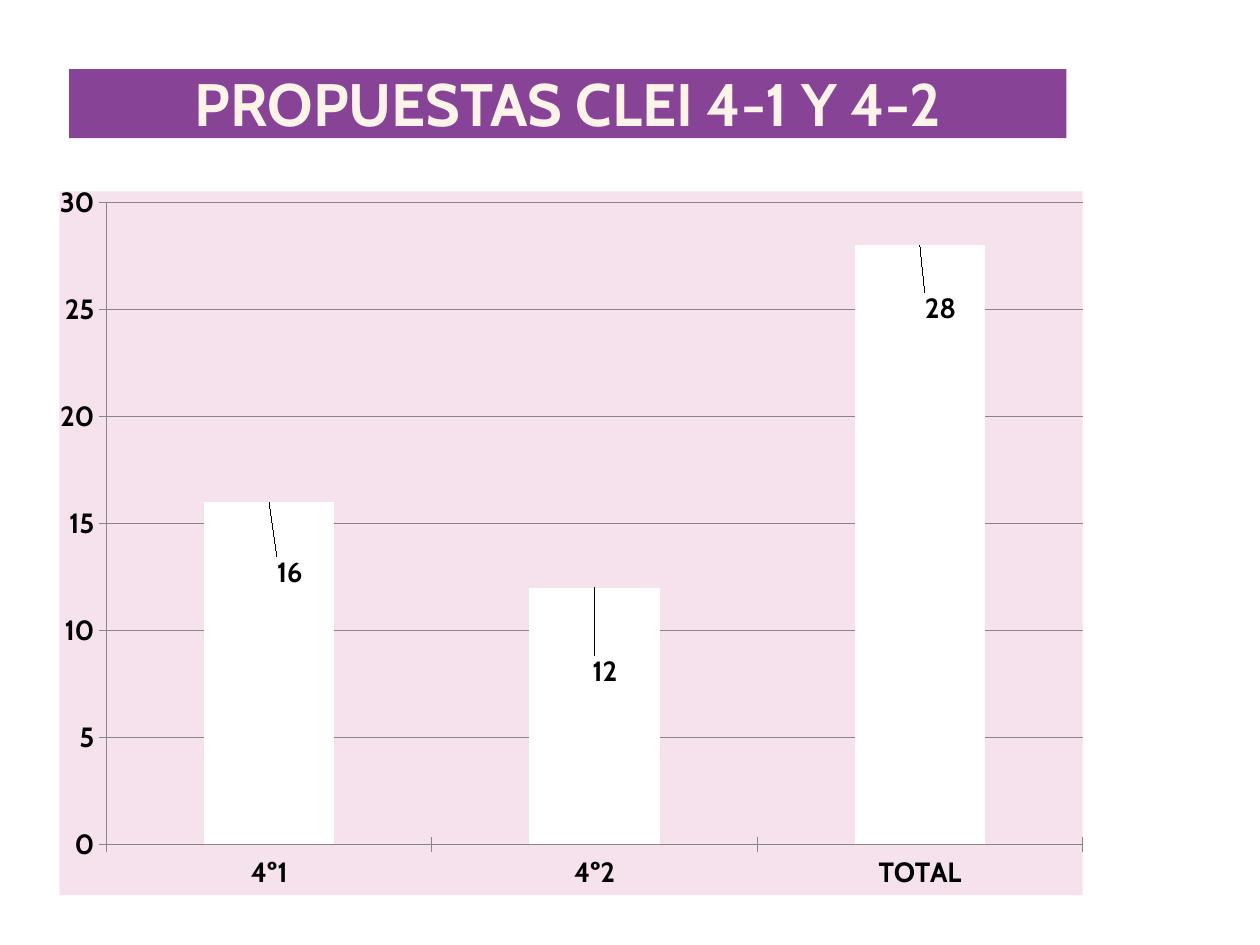
"""Build the slide of proposals for CLEI 4-1 and 4-2."""
from dataclasses import dataclass

from lxml.etree import _Element as Element
from pptx import Presentation
from pptx.chart.data import CategoryChartData
from pptx.dml.color import RGBColor
from pptx.enum.chart import XL_CHART_TYPE as ChartType
from pptx.enum.chart import XL_LABEL_POSITION as LabelPosition
from pptx.enum.chart import XL_TICK_MARK as TickMark
from pptx.enum.shapes import MSO_SHAPE as Preset
from pptx.enum.text import MSO_ANCHOR as Anchor
from pptx.enum.text import PP_ALIGN as Align
from pptx.oxml import parse_xml
from pptx.oxml.ns import nsdecls, qn
from pptx.util import Pt

PURPLE = RGBColor(0x87, 0x43, 0x96)
CREAM = RGBColor(0xFE, 0xF3, 0xE8)
PINK = RGBColor(0xF5, 0xE2, 0xED)
WHITE = RGBColor(0xFF, 0xFF, 0xFF)
BLACK = RGBColor(0, 0, 0)
GRAY = RGBColor(0x86, 0x86, 0x86)
FONT = "Cabin"


@dataclass(frozen=True)
class Bar:
    group: str
    proposals: int
    label_dx: float
    label_dy: float


@dataclass(frozen=True)
class Box:
    left: float
    top: float
    width: float
    height: float

    def lengths(self) -> tuple:
        return Pt(self.left), Pt(self.top), Pt(self.width), Pt(self.height)


BARS = (
    Bar("4º1", 16, 0.02, 0.13),
    Bar("4º2", 12, 0.01, 0.15),
    Bar("TOTAL", 28, 0.02, 0.12),
)


def style_font(font, *, size: float, color: RGBColor, bold: bool = True) -> None:
    font.name, font.size, font.bold = FONT, Pt(size), bold
    font.color.rgb = color


def write_text(frame, text: str, *, size: float, color: RGBColor, align: Align) -> None:
    paragraph = frame.paragraphs[0]
    paragraph.alignment = align
    run = paragraph.add_run()
    run.text = text
    style_font(run.font, size=size, color=color)


def add_banner(slide, box: Box, text: str) -> None:
    banner = slide.shapes.add_shape(Preset.RECTANGLE, *box.lengths())
    banner.shadow.inherit = False
    banner.fill.solid()
    banner.fill.fore_color.rgb = PURPLE
    banner.line.fill.background()
    frame = banner.text_frame
    frame.word_wrap = True
    frame.vertical_anchor = Anchor.BOTTOM
    frame.margin_left = frame.margin_right = Pt(3.6)
    frame.margin_top = frame.margin_bottom = 0
    write_text(frame, text, size=34.2, color=CREAM, align=Align.CENTER)


def manual_layout(target: str = "", **values: float) -> Element:
    modes = "".join(f'<c:{key}Mode val="edge"/>' for key in "xy") if target else ""
    inner = f'<c:layoutTarget val="{target}"/>' if target else ""
    sizes = "".join(f'<c:{key} val="{value}"/>' for key, value in values.items())
    return parse_xml(
        f"<c:layout {nsdecls('c')}><c:manualLayout>{inner}{modes}{sizes}"
        "</c:manualLayout></c:layout>"
    )


def style_axis(axis) -> None:
    axis.major_tick_mark = TickMark.CROSS
    axis.minor_tick_mark = TickMark.NONE
    axis.format.line.color.rgb = GRAY
    style_font(axis.tick_labels.font, size=16, color=BLACK)


def place_label(series, index: int, bar: Bar) -> None:
    label = series.points[index].data_label
    style_font(label.font, size=16, color=BLACK)
    label.position = LabelPosition.OUTSIDE_END
    entry = series.data_labels._element.findall(qn("c:dLbl"))[index]
    entry.insert(1, manual_layout(x=bar.label_dx, y=bar.label_dy))


def add_proposals_chart(slide, box: Box, bars: tuple[Bar, ...]) -> None:
    proposals = CategoryChartData()
    proposals.categories = [bar.group for bar in bars]
    proposals.add_series("Series 1", [bar.proposals for bar in bars])
    chart = slide.shapes.add_chart(
        ChartType.COLUMN_CLUSTERED, *box.lengths(), proposals
    ).chart
    chart.has_title = chart.has_legend = False
    style_font(chart.font, size=10, color=BLACK, bold=False)

    background = parse_xml(
        f"<c:spPr {nsdecls('c', 'a')}><a:solidFill><a:srgbClr val=\"{PINK}\"/>"
        "</a:solidFill><a:ln><a:noFill/></a:ln></c:spPr>"
    )
    chart_part = chart._chartSpace.find(qn("c:chart"))
    chart_part.addnext(background)
    plot_area = chart_part.find(qn("c:plotArea"))
    for automatic in plot_area.findall(qn("c:layout")):
        plot_area.remove(automatic)
    plot_area.insert(0, manual_layout("inner", x=0.046, y=0.016, w=0.954, h=0.912))

    style_axis(chart.category_axis)
    scale = chart.value_axis
    style_axis(scale)
    scale.minimum_scale, scale.maximum_scale, scale.major_unit = 0, 30, 5
    scale.has_major_gridlines = True
    scale.major_gridlines.format.line.color.rgb = GRAY

    columns = chart.plots[0]
    columns.gap_width = 150
    columns.vary_by_categories = False
    series = columns.series[0]
    series.format.fill.solid()
    series.format.fill.fore_color.rgb = WHITE
    series.data_labels.show_value = True
    series.data_labels.position = LabelPosition.OUTSIDE_END
    style_font(series.data_labels.font, size=16, color=BLACK)
    for index, bar in enumerate(bars):
        place_label(series, index, bar)


def main() -> None:
    deck = Presentation()
    deck.slide_width, deck.slide_height = Pt(720), Pt(540)
    slide = deck.slides.add_slide(deck.slide_layouts[6])
    add_banner(slide, Box(39.5, 39.5, 570, 39.5), "PROPUESTAS CLEI 4-1 Y 4-2")
    add_proposals_chart(slide, Box(34, 106.5, 585, 405), BARS)
    deck.save("out.pptx")


if __name__ == "__main__":
    main()
